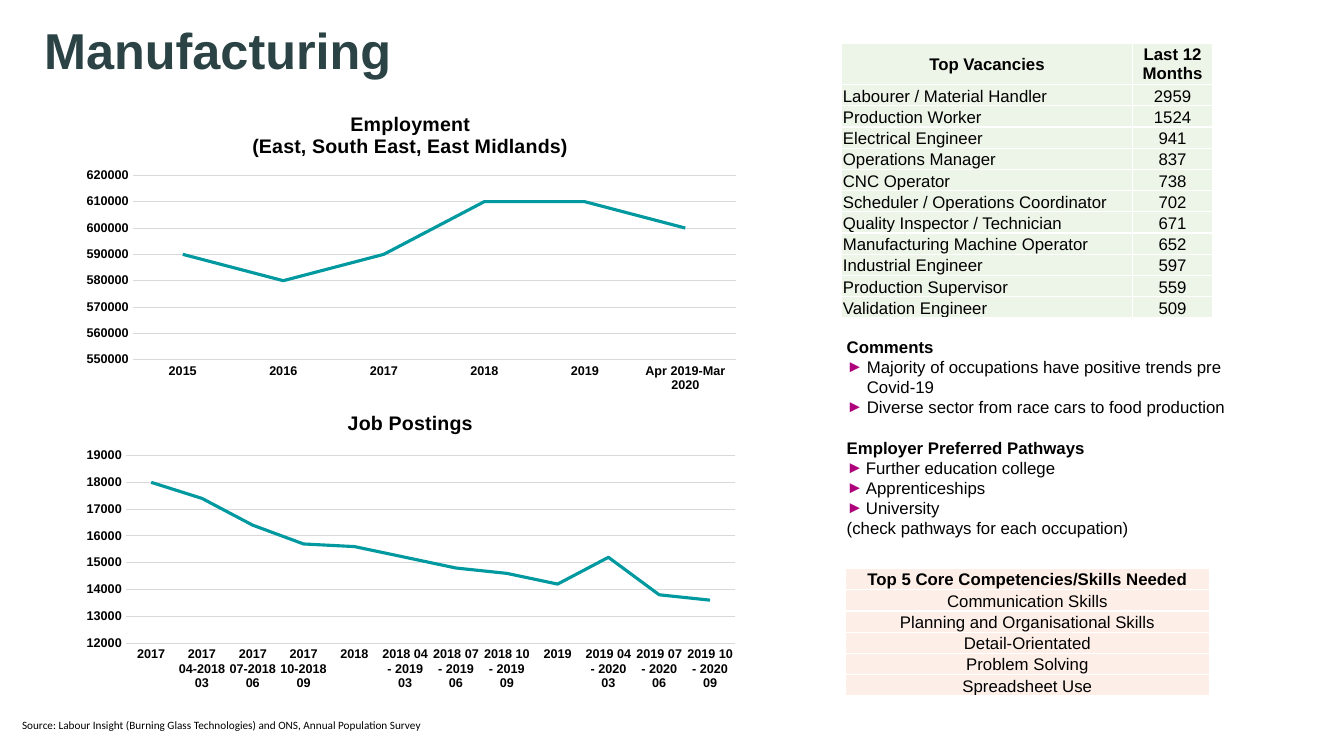
from lxml import etree
from pptx import Presentation
from pptx.chart.data import CategoryChartData as ChartData
from pptx.dml.color import RGBColor
from pptx.enum.chart import XL_CHART_TYPE as Kind, XL_TICK_MARK as Tick
from pptx.enum.text import MSO_ANCHOR as Anchor, PP_ALIGN as Align
from pptx.oxml import parse_xml
from pptx.oxml.ns import nsdecls, qn
from pptx.util import Inches, Pt

BLACK, SLATE, TEAL, GREY = "000000", "2B4345", "0099A0", "D9D9D9"
GREEN, PEACH, PINK, WHITE = "EDF4E8", "FDEEE8", "AD007A", "FFFFFF"


def color(code):
    return RGBColor.from_string(code)


class Page:
    """Hold the style and the current slide, and draw each kind of element."""

    def __init__(self, deck, face="Arial"):
        self.slide = deck.slides.add_slide(deck.slide_layouts[6])
        self.face = face

    def font(self, font, size, bold=False, tint=BLACK, face=None):
        font.size, font.bold, font.name = Pt(size), bold, face or self.face
        font.color.rgb = color(tint)

    def run(self, para, text, size, **style):
        run = para.add_run()
        run.text = text
        self.font(run.font, size, **style)

    def box(self, left, top, width, height, anchor=Anchor.TOP):
        shape = self.slide.shapes.add_textbox(
            Inches(left), Inches(top), Inches(width), Inches(height))
        frame = shape.text_frame
        frame.word_wrap, frame.vertical_anchor = True, anchor
        return frame

    def bullet(self, para, indent):
        props = para._p.get_or_add_pPr()
        props.set("marL", str(Inches(indent)))
        props.set("indent", str(-Inches(indent)))
        tint = etree.SubElement(props, qn("a:buClr"))
        etree.SubElement(tint, qn("a:srgbClr")).set("val", PINK)
        etree.SubElement(props, qn("a:buFont")).set("typeface", self.face)
        etree.SubElement(props, qn("a:buChar")).set("char", "►")

    def notes(self, frame, lines):
        for i, (text, indent, gap) in enumerate(lines):
            para = frame.add_paragraph() if i else frame.paragraphs[0]
            if indent:
                self.bullet(para, indent)
            if gap:
                para.space_before = Pt(gap)
            head = text in ("Comments", "Employer Preferred Pathways")
            self.run(para, text, 12, bold=head)

    def cell(self, cell, text, fill, head, center):
        cell.margin_left = cell.margin_right = cell.margin_top = Inches(0.01)
        cell.margin_bottom = 0
        cell.vertical_anchor = Anchor.MIDDLE if head else Anchor.BOTTOM
        props = cell._tc.get_or_add_tcPr()
        for side in ("lnL", "lnR", "lnT", "lnB"):
            props.append(parse_xml(
                f'<a:{side} {nsdecls("a")} w="{Pt(1)}"><a:solidFill>'
                f'<a:srgbClr val="{WHITE}"/></a:solidFill></a:{side}>'))
        cell.fill.solid()
        cell.fill.fore_color.rgb = color(fill)
        para = cell.text_frame.paragraphs[0]
        para.alignment = Align.CENTER if center else Align.LEFT
        self.run(para, text, 12, bold=head)

    def table(self, left, top, widths, rows, fill, first=0.21, step=0.21):
        high = first + step * (len(rows) - 1)
        table = self.slide.shapes.add_table(
            len(rows), len(widths), Inches(left), Inches(top),
            Inches(sum(widths)), Inches(high)).table
        table.first_row = table.horz_banding = False
        for col, width in zip(table.columns, widths):
            col.width = Inches(width)
        for r, row in enumerate(rows):
            table.rows[r].height = Inches(step if r else first)
            for c, text in enumerate(row):
                center = r == 0 or c == len(row) - 1
                self.cell(table.cell(r, c), text, fill, r == 0, center)

    def chart(self, top, title, data, low, high, step, plot):
        source = ChartData()
        source.categories = [name for name, _ in data]
        source.add_series("Series 1", [value for _, value in data])
        chart = self.slide.shapes.add_chart(
            Kind.LINE, Inches(0.71), Inches(top), Inches(6.72), Inches(3),
            source).chart
        self.font(chart.font, 10, bold=True)
        chart.has_legend = False
        frame = chart.chart_title.text_frame
        for i, text in enumerate(title):
            para = frame.add_paragraph() if i else frame.paragraphs[0]
            self.run(para, text, 14, bold=True)
        chart.chart_title.include_in_layout = False
        for axis in (chart.category_axis, chart.value_axis):
            axis.major_tick_mark = axis.minor_tick_mark = Tick.NONE
            self.font(axis.tick_labels.font, 9, bold=True)
        scale = chart.value_axis
        scale.minimum_scale, scale.maximum_scale = low, high
        scale.major_unit = step
        scale.format.line.fill.background()
        for line in (chart.category_axis.format.line,
                     scale.major_gridlines.format.line):
            line.color.rgb, line.width = color(GREY), Pt(0.75)
        chart.plots[0].vary_by_categories = False
        series = chart.plots[0].series[0]
        series.smooth = False
        series.format.line.color.rgb = color(TEAL)
        series.format.line.width = Pt(2.25)
        self.place(chart, plot)

    def place(self, chart, plot):
        area = chart._chartSpace.chart.plotArea
        for old in area.findall(qn("c:layout")):
            area.remove(old)
        modes = [("layoutTarget", "inner"), ("xMode", "edge"), ("yMode", "edge")]
        parts = "".join(f'<c:{tag} val="{value}"/>'
                        for tag, value in modes + list(zip("xywh", plot)))
        area.insert(0, parse_xml(
            f'<c:layout {nsdecls("c")}><c:manualLayout>{parts}'
            '</c:manualLayout></c:layout>'))


STAFF = [("2015", 590000), ("2016", 580000), ("2017", 590000),
         ("2018", 610000), ("2019", 610000), ("Apr 2019-Mar 2020", 600000)]
POSTS = [("2017", 18000), ("2017 04-2018 03", 17400),
         ("2017 07-2018 06", 16400), ("2017 10-2018 09", 15700),
         ("2018", 15600), ("2018 04 - 2019 03", 15200),
         ("2018 07 - 2019 06", 14800), ("2018 10 - 2019 09", 14600),
         ("2019", 14200), ("2019 04 - 2020 03", 15200),
         ("2019 07 - 2020 06", 13800), ("2019 10 - 2020 09", 13600)]
JOBS = [("Top Vacancies", "Last 12 Months"),
        ("Labourer / Material Handler", "2959"), ("Production Worker", "1524"),
        ("Electrical Engineer", "941"), ("Operations Manager", "837"),
        ("CNC Operator", "738"), ("Scheduler / Operations Coordinator", "702"),
        ("Quality Inspector / Technician", "671"),
        ("Manufacturing Machine Operator", "652"),
        ("Industrial Engineer", "597"), ("Production Supervisor", "559"),
        ("Validation Engineer", "509")]
SKILLS = ["Top 5 Core Competencies/Skills Needed", "Communication Skills",
          "Planning and Organisational Skills", "Detail-Orientated",
          "Problem Solving", "Spreadsheet Use"]
NOTES = [("Comments", 0, 0),
         ("Majority of occupations have positive trends pre Covid-19", 0.2, 0),
         ("Diverse sector from race cars to food production", 0.2, 0),
         ("Employer Preferred Pathways", 0, 14.5),
         ("Further education college", 0.19, 0), ("Apprenticeships", 0.19, 0),
         ("University", 0.19, 0), ("(check pathways for each occupation)", 0, 0)]


def main():
    deck = Presentation()
    deck.slide_width, deck.slide_height = Inches(13.33), Inches(7.5)
    page = Page(deck)
    title = page.box(0.34, -0.2, 12.66, 1.45, Anchor.MIDDLE).paragraphs[0]
    title.line_spacing = 0.9
    page.run(title, "Manufacturing", 36, bold=True, tint=SLATE)
    page.chart(3.92, ["Job Postings"], POSTS, 12000, 19000, 1000,
               (0.08, 0.2, 0.9, 0.62))
    page.notes(page.box(8.3, 3.29, 4.16, 2.52), NOTES)
    page.table(8.35, 0.43, [2.88, 0.8], JOBS, GREEN, first=0.41)
    page.table(8.38, 5.64, [3.62], [(skill,) for skill in SKILLS], PEACH)
    page.chart(0.96, ["Employment", "(East, South East, East Midlands)"], STAFF,
               550000, 620000, 10000, (0.09, 0.26, 0.89, 0.61))
    credit = page.box(0.12, 7.08, 5.45, 0.37).paragraphs[0]
    page.run(credit, "Source: Labour Insight (Burning Glass Technologies) and "
             "ONS, Annual Population Survey", 8, face="Calibri")
    deck.save("out.pptx")


if __name__ == "__main__":
    main()
